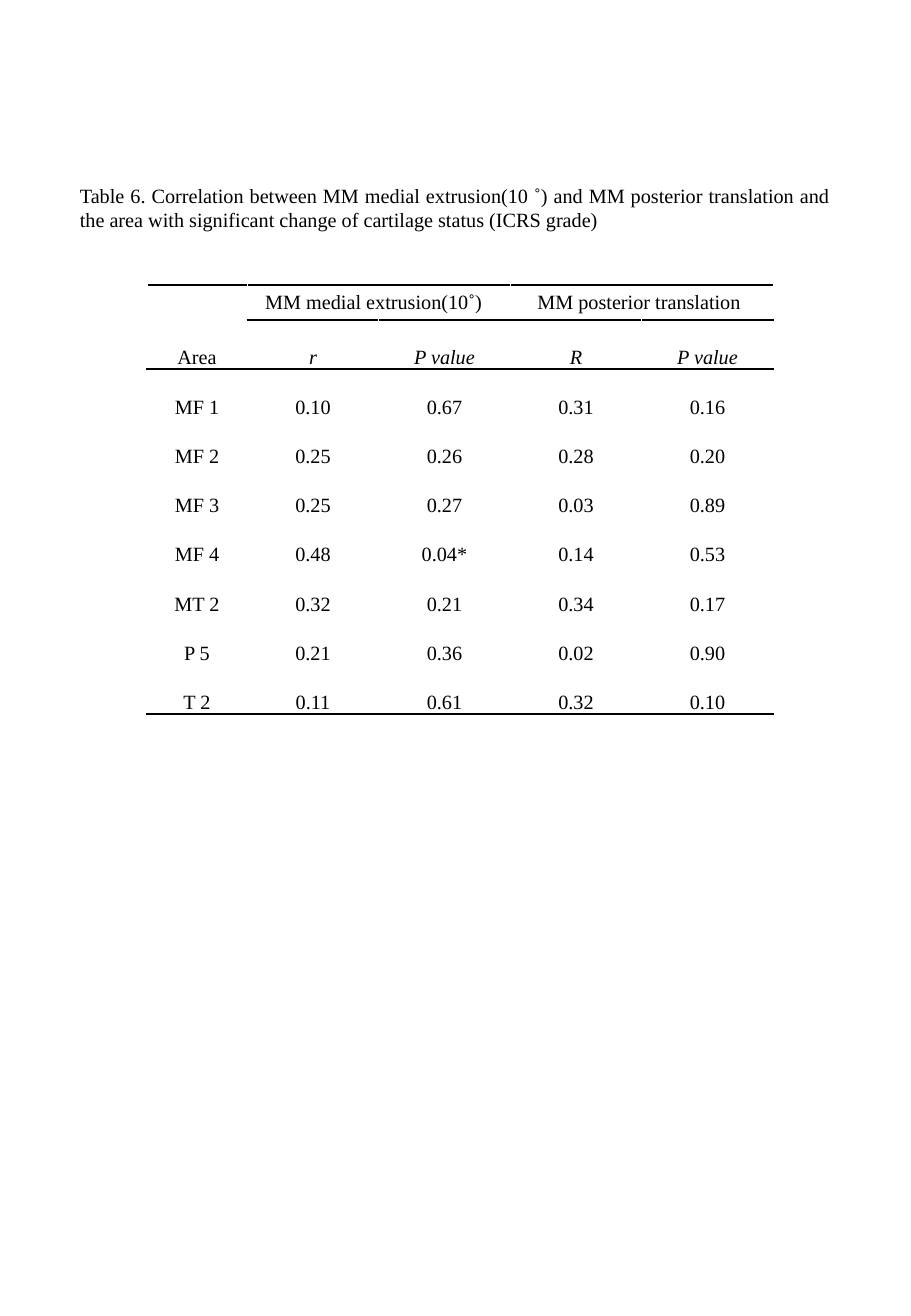
from lxml.etree import SubElement
from pptx import Presentation
from pptx.dml.color import RGBColor
from pptx.enum.text import MSO_ANCHOR as Anchor, PP_ALIGN as Align
from pptx.oxml.ns import qn
from pptx.util import Cm, Pt

COLORS = {"ink": "000000", "paper": "FFFFFF"}
FONT = "Times New Roman"
CAPTION = (
    "Table 6. Correlation between MM medial extrusion(10 ˚) and MM posterior "
    "translation and the area with significant change of cartilage status (ICRS grade)"
)
GROUPS = [(1, "MM medial extrusion(10˚)", 0.46), (3, "MM posterior translation", 0.36)]
HEADINGS = ["Area", "r", "P value", "R", "P value"]
RESULTS = [
    ["MF 1", "0.10", "0.67", "0.31", "0.16"],
    ["MF 2", "0.25", "0.26", "0.28", "0.20"],
    ["MF 3", "0.25", "0.27", "0.03", "0.89"],
    ["MF 4", "0.48", "0.04*", "0.14", "0.53"],
    ["MT 2", "0.32", "0.21", "0.34", "0.17"],
    ["P 5", "0.21", "0.36", "0.02", "0.90"],
    ["T 2", "0.11", "0.61", "0.32", "0.10"],
]
RULE_WIDTHS = {0: 1, 1: 1, 2: 1.5, 9: 1.5}
COLUMN_WIDTHS = [2.1] + [2.75] * 4
ROW_HEIGHTS = [0.72] + [1.03] * 8


def style_para(para, align, italic=False):
    """Set the shared type style on a paragraph."""
    para.alignment = align
    para.font.name = FONT
    para.font.size = Pt(12)
    para.font.italic = italic
    para.font.color.rgb = RGBColor.from_string(COLORS["ink"])


def add_border(cell, side, color, width):
    """Draw one edge of a cell."""
    line = SubElement(cell._tc.get_or_add_tcPr(), qn(f"a:ln{side}"), w=str(Pt(width)))
    fill = SubElement(line, qn("a:solidFill"))
    SubElement(fill, qn("a:srgbClr"), val=COLORS[color])


def rule_cell(cell, row, column):
    """Give a cell white sides, black rules where due, and no fill."""
    edges = {"L": None, "R": None, "T": row, "B": row + 1}
    for side, level in edges.items():
        ruled = level in RULE_WIDTHS and (level, column) != (1, 0)
        add_border(cell, side, "ink" if ruled else "paper", RULE_WIDTHS[level] if ruled else 1)
    cell.fill.background()


def set_margins(cell, left, top, right, bottom):
    """Set the four cell margins in centimetres."""
    cell.margin_left, cell.margin_top = Cm(left), Cm(top)
    cell.margin_right, cell.margin_bottom = Cm(right), Cm(bottom)


def fill_cell(cell, text, italic=False):
    """Write a centred entry standing on the bottom of its cell."""
    cell.text = text
    cell.vertical_anchor = Anchor.BOTTOM
    set_margins(cell, 0.02, 0.02, 0.02, 0)
    para = cell.text_frame.paragraphs[0]
    style_para(para, Align.CENTER, italic)
    para.line_spacing = 2.0


def add_group_heading(table, column, text, right_margin):
    """Write a heading over two columns."""
    cell = table.cell(0, column)
    cell.merge(table.cell(0, column + 1))
    cell.text = text
    cell.vertical_anchor = Anchor.MIDDLE
    set_margins(cell, 0.25, 0.13, right_margin, 0.13)
    style_para(cell.text_frame.paragraphs[0], Align.CENTER)


def add_results_table(page):
    """Build the ruled correlation table."""
    frame = page.shapes.add_table(
        len(ROW_HEIGHTS), len(COLUMN_WIDTHS), Cm(3.07), Cm(5.96),
        Cm(sum(COLUMN_WIDTHS)), Cm(sum(ROW_HEIGHTS)))
    table = frame.table
    table.first_row = table.horz_banding = False
    for column, width in zip(table.columns, COLUMN_WIDTHS):
        column.width = Cm(width)
    for row, height in zip(table.rows, ROW_HEIGHTS):
        row.height = Cm(height)
    for row in range(len(ROW_HEIGHTS)):
        for column in range(len(COLUMN_WIDTHS)):
            rule_cell(table.cell(row, column), row, column)
    style_para(table.cell(0, 0).text_frame.paragraphs[0], Align.CENTER)
    for group in GROUPS:
        add_group_heading(table, *group)
    for row, entries in enumerate([HEADINGS] + RESULTS, start=1):
        for column, text in enumerate(entries):
            fill_cell(table.cell(row, column), text, italic=row == 1 and column > 0)


def add_caption(page):
    """Add the justified caption above the table."""
    box = page.shapes.add_textbox(Cm(1.42), Cm(3.71), Cm(16.2), Cm(1.28))
    box.text_frame.word_wrap = True
    para = box.text_frame.paragraphs[0]
    para.text = CAPTION
    style_para(para, Align.JUSTIFY)


def main():
    """Build and save the page."""
    deck = Presentation()
    deck.slide_width, deck.slide_height = Cm(19.05), Cm(27.51)
    page = deck.slides.add_slide(deck.slide_layouts[6])
    add_results_table(page)
    add_caption(page)
    deck.save("out.pptx")


if __name__ == "__main__":
    main()
